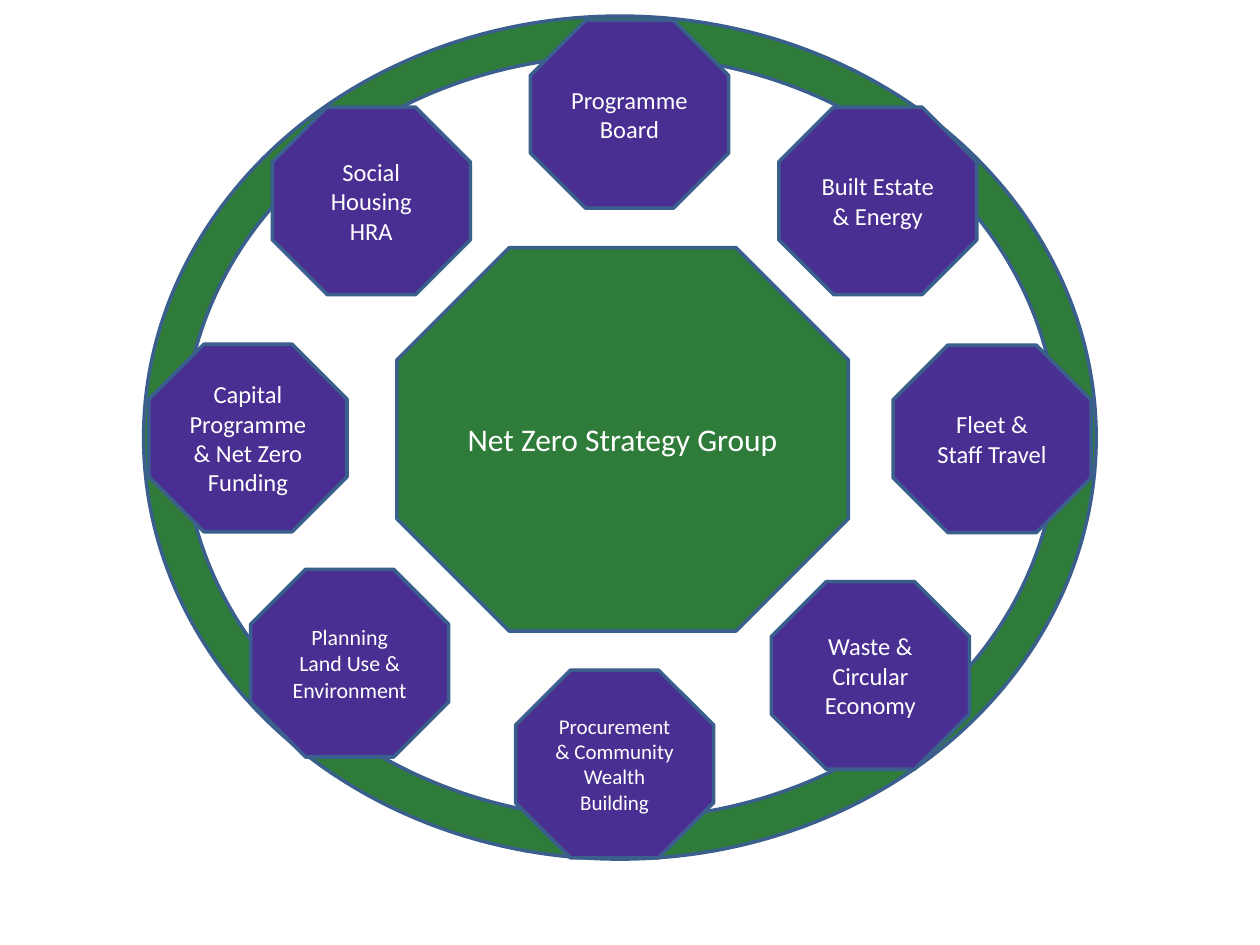
from dataclasses import dataclass

from pptx import Presentation
from pptx.dml.color import RGBColor
from pptx.enum.shapes import MSO_SHAPE
from pptx.enum.text import MSO_ANCHOR, PP_ALIGN
from pptx.util import Pt

ELLIPSE = MSO_SHAPE.OVAL
OCTAGON = MSO_SHAPE.OCTAGON
MIDDLE = MSO_ANCHOR.MIDDLE
CENTER = PP_ALIGN.CENTER


@dataclass(frozen=True)
class Theme:
    green: RGBColor = RGBColor(0x2F, 0x7C, 0x3A)
    purple: RGBColor = RGBColor(0x49, 0x2F, 0x92)
    outline: RGBColor = RGBColor(0x3A, 0x5F, 0x8C)
    white: RGBColor = RGBColor(0xFF, 0xFF, 0xFF)
    font: str = "Calibri"
    hub_size: float = 18
    group_size: float = 14
    compact_size: float = 12.5
    small_size: float = 12
    line_width: float = 2


THEME = Theme()
GROUP_WIDTH, GROUP_HEIGHT = 113.2, 107.2
SIDE_INSET = 6.5

GROUPS = [
    ("Programme Board", 303.1, 11.7, THEME.group_size),
    ("Built Estate & Energy", 445, 61.2, THEME.group_size),
    ("Fleet & Staff Travel", 510.3, 197.2, THEME.group_size),
    ("Waste & Circular Economy", 440.8, 332.4, THEME.group_size),
    ("Procurement & Community Wealth Building", 294.6, 383, THEME.small_size),
    ("Planning Land Use & Environment", 143.2, 325.4, THEME.compact_size),
    ("Capital Programme & Net Zero Funding", 85.1, 196.7, THEME.group_size),
    ("Social Housing HRA", 155.6, 61.2, THEME.group_size),
]


def add_outlined(slide, kind, box, fill):
    outlined = slide.shapes.add_shape(kind, *(Pt(length) for length in box))
    outlined.shadow.inherit = False
    outlined.fill.solid()
    outlined.fill.fore_color.rgb = fill
    outlined.line.color.rgb = THEME.outline
    outlined.line.width = Pt(THEME.line_width)
    return outlined


def add_octagon(slide, label, box, fill, size):
    frame = add_outlined(slide, OCTAGON, box, fill).text_frame
    frame.word_wrap = True
    frame.vertical_anchor = MIDDLE
    frame.margin_left = frame.margin_right = Pt(SIDE_INSET)
    paragraph = frame.paragraphs[0]
    paragraph.alignment = CENTER
    run = paragraph.add_run()
    run.text = label
    run.font.name = THEME.font
    run.font.size = Pt(size)
    run.font.color.rgb = THEME.white


def add_ring(slide):
    add_outlined(slide, ELLIPSE, (82.1, 9.2, 544.3, 481.7), THEME.green)
    add_outlined(slide, ELLIPSE, (105.1, 31.7, 499, 436.3), THEME.white)


def main():
    presentation = Presentation()
    presentation.slide_width = Pt(720)
    presentation.slide_height = Pt(540)
    slide = presentation.slides.add_slide(presentation.slide_layouts[6])

    add_ring(slide)
    add_octagon(slide, "Net Zero Strategy Group", (226.8, 141.6, 258, 219),
                THEME.green, THEME.hub_size)
    for label, left, top, size in GROUPS:
        add_octagon(slide, label, (left, top, GROUP_WIDTH, GROUP_HEIGHT),
                    THEME.purple, size)

    presentation.save("out.pptx")


if __name__ == "__main__":
    main()
